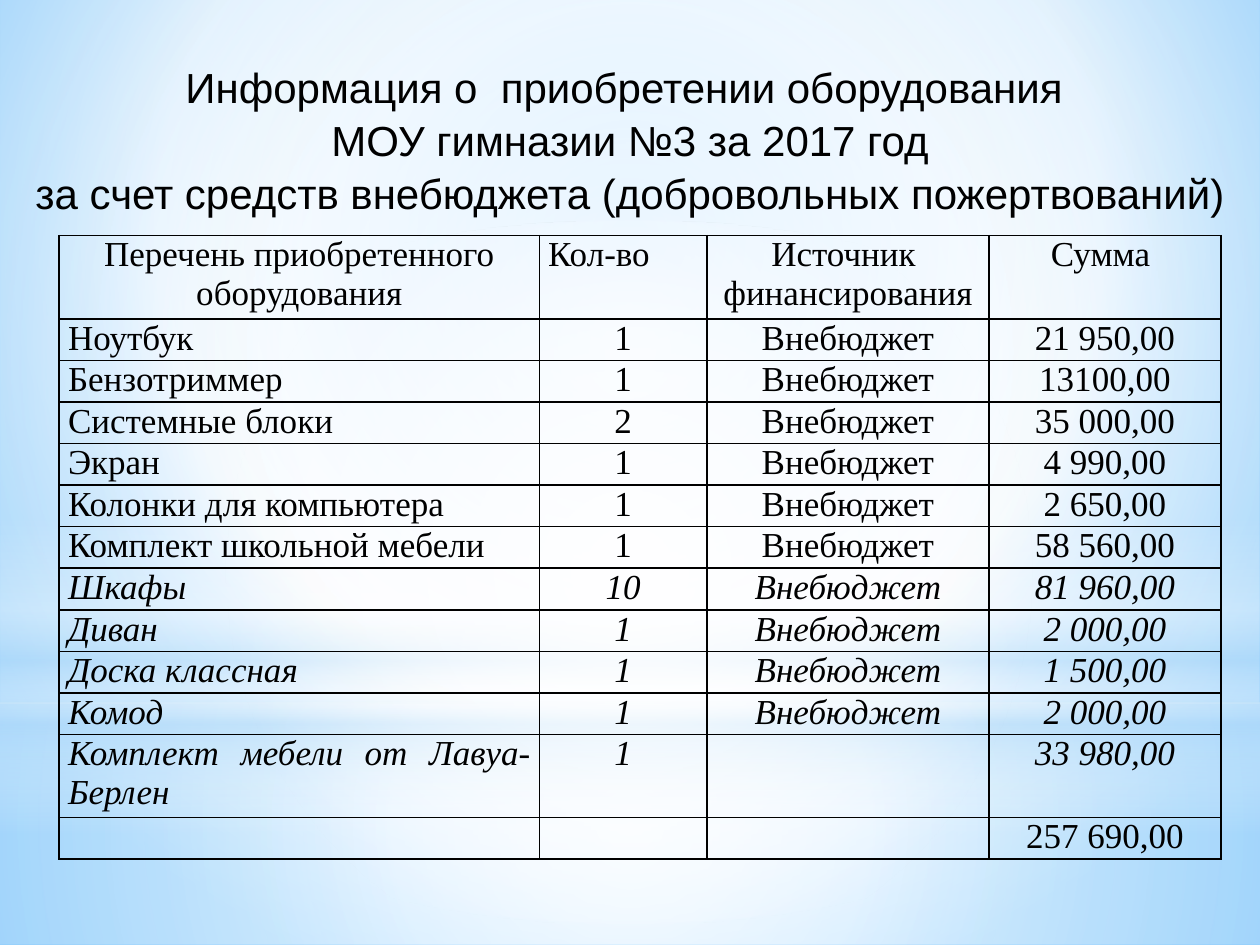
from typing import NamedTuple, Optional

from pptx import Presentation
from pptx.dml.color import RGBColor
from pptx.enum.shapes import MSO_SHAPE
from pptx.enum.text import MSO_ANCHOR, PP_ALIGN
from pptx.oxml import parse_xml
from pptx.oxml.ns import nsdecls
from pptx.util import Inches, Pt

BLACK = RGBColor(0x00, 0x00, 0x00)
WHITE = RGBColor(0xFF, 0xFF, 0xFF)
PALE_BLUE = RGBColor(0xB4, 0xDC, 0xFA)
SKY = RGBColor(0x9E, 0xD5, 0xFF)
DEEP_SKY = RGBColor(0x5B, 0xB9, 0xFF)


class Stop(NamedTuple):
    position: int
    color: RGBColor
    opacity: int = 100


class Gradient(NamedTuple):
    stops: list[Stop]
    # Focus rectangle (left, top, right, bottom) in percent; None runs downwards
    focus: Optional[tuple[int, int, int, int]] = (50, 50, 50, 50)


class Glow(NamedTuple):
    shape: MSO_SHAPE
    top: float
    height: float
    gradient: Gradient


class Item(NamedTuple):
    name: str
    count: str
    source: str
    amount: str
    italic: bool = False


BACKGROUND = Gradient([Stop(0, SKY), Stop(60, WHITE), Stop(100, DEEP_SKY)],
                      (20, 10, 20, 60))
GLOWS = [
    Glow(MSO_SHAPE.RECTANGLE, 5.58, 1.92, Gradient(
        [Stop(0, WHITE, 91), Stop(37, WHITE, 76), Stop(100, PALE_BLUE, 79)])),
    Glow(MSO_SHAPE.RECTANGLE, 0, 5.58, Gradient(
        [Stop(0, WHITE, 89), Stop(48, WHITE, 62), Stop(100, PALE_BLUE, 79)])),
    Glow(MSO_SHAPE.RECTANGLE, 4.12, 2.5, Gradient(
        [Stop(0, WHITE, 0), Stop(29, WHITE, 30), Stop(45, PALE_BLUE, 40),
         Stop(55, WHITE, 26), Stop(65, PALE_BLUE, 60), Stop(100, WHITE, 0)], None)),
    Glow(MSO_SHAPE.OVAL, 1.75, 5.58, Gradient([Stop(0, WHITE), Stop(56, WHITE, 0)])),
]

TITLE_LINES = [
    "Информация о  приобретении оборудования ",
    "МОУ гимназии №3 за 2017 год",
    "за счет средств внебюджета (добровольных пожертвований)",
]
FUND = "Внебюджет"
HEADER = Item("Перечень приобретенного\nоборудования", "Кол-во",
              "Источник \nфинансирования", "Сумма ")
ITEMS = [
    Item("Ноутбук", "1", FUND, "21 950,00"),
    Item("Бензотриммер", "1", FUND, "13100,00"),
    Item("Системные блоки", "2", FUND, "35 000,00"),
    Item("Экран ", "1", FUND, "4 990,00"),
    Item("Колонки для компьютера", "1", FUND, "2 650,00"),
    Item("Комплект школьной мебели", "1", FUND, "58 560,00"),
    Item("Шкафы", "10", FUND, "81 960,00", True),
    Item("Диван", "1", FUND, "2 000,00", True),
    Item("Доска классная", "1", FUND, "1 500,00", True),
    Item("Комод", "1", FUND, "2 000,00", True),
    Item("Комплект мебели от Лавуа-Берлен", "1", "", "33 980,00", True),
    Item("", "", "", "257 690,00"),
]
COLUMN_WIDTHS = [3.81, 1.33, 2.24, 1.84]
ROW_HEIGHT = 0.33
TWO_LINE_ROWS = {0, 11}
HEADER_ALIGN = [PP_ALIGN.CENTER, PP_ALIGN.LEFT, PP_ALIGN.CENTER, PP_ALIGN.CENTER]
ITEM_ALIGN = [PP_ALIGN.JUSTIFY] + [PP_ALIGN.CENTER] * 3


def apply_gradient(fill, owner, gradient: Gradient) -> None:
    """Fill the owner element of a fill with a gradient."""
    fill.solid()
    stops = "".join(
        f'<a:gs pos="{stop.position * 1000}"><a:srgbClr val="{stop.color}">'
        f'<a:alpha val="{stop.opacity * 1000}"/></a:srgbClr></a:gs>'
        for stop in gradient.stops)
    if gradient.focus is None:
        direction = '<a:lin ang="5400000" scaled="0"/>'
    else:
        sides = " ".join(f'{side}="{value * 1000}"'
                         for side, value in zip("ltrb", gradient.focus))
        direction = f'<a:path path="circle"><a:fillToRect {sides}/></a:path>'
    solid = owner.xpath(".//a:solidFill")[0]
    solid.getparent().replace(solid, parse_xml(
        f'<a:gradFill {nsdecls("a")} rotWithShape="1"><a:gsLst>{stops}</a:gsLst>'
        f'{direction}</a:gradFill>'))


def add_glow(s, glow: Glow) -> None:
    sp = s.shapes.add_shape(glow.shape, 0, Inches(glow.top),
                            Inches(10), Inches(glow.height))
    sp.shadow.inherit = False
    sp.line.fill.background()
    apply_gradient(sp.fill, sp.element.spPr, glow.gradient)


def set_borders(cell) -> None:
    tc_pr = cell._tc.get_or_add_tcPr()
    for index, side in enumerate("LRTB"):
        tc_pr.insert(index, parse_xml(
            f'<a:ln{side} {nsdecls("a")} w="12700"><a:solidFill>'
            f'<a:srgbClr val="{BLACK}"/></a:solidFill></a:ln{side}>'))


def format_paragraph(p, font: str, size: int, align: PP_ALIGN,
                     italic: bool = False) -> None:
    p.alignment = align
    p.font.name = font
    p.font.size = Pt(size)
    p.font.italic = italic
    p.font.color.rgb = BLACK


def fill_cell(cell, text: str, align: PP_ALIGN, italic: bool) -> None:
    cell.margin_left = cell.margin_right = Inches(0.07)
    cell.margin_top = cell.margin_bottom = 0
    cell.fill.background()
    set_borders(cell)
    cell.text_frame.text = text
    for p in cell.text_frame.paragraphs:
        format_paragraph(p, "Times New Roman", 20, align, italic)


def add_equipment_table(s) -> None:
    rows = [HEADER] + ITEMS
    heights = [ROW_HEIGHT * (2 if i in TWO_LINE_ROWS else 1) for i in range(len(rows))]
    table = s.shapes.add_table(
        len(rows), len(COLUMN_WIDTHS), Inches(0.47), Inches(1.87),
        Inches(sum(COLUMN_WIDTHS)), Inches(sum(heights))).table
    table.first_row = table.horz_banding = False
    for column, width in zip(table.columns, COLUMN_WIDTHS):
        column.width = Inches(width)
    for i, (item, height) in enumerate(zip(rows, heights)):
        table.rows[i].height = Inches(height)
        aligns = HEADER_ALIGN if item is HEADER else ITEM_ALIGN
        for j, (text, align) in enumerate(zip(item[:4], aligns)):
            fill_cell(table.cell(i, j), text, align, item.italic)


def add_title(s) -> None:
    title = s.shapes.title
    title.left, title.top = 0, Inches(0.39)
    title.width, title.height = Inches(10), Inches(1.78)
    tf = title.text_frame
    tf.word_wrap = True
    tf.vertical_anchor = MSO_ANCHOR.TOP
    tf.margin_top = Inches(0.08)
    tf.text = "\n".join(TITLE_LINES)
    for p in tf.paragraphs:
        format_paragraph(p, "Arial", 24, PP_ALIGN.CENTER)
        p.line_spacing = 1.05
    # Bring the title in front of the glows
    title.element.getparent().append(title.element)


def main() -> None:
    prs = Presentation()
    prs.slide_width, prs.slide_height = Inches(10), Inches(7.5)
    s = prs.slides.add_slide(prs.slide_layouts[5])

    # Backdrop
    apply_gradient(s.background.fill, s.element.cSld, BACKGROUND)
    for glow in GLOWS:
        add_glow(s, glow)

    # Content
    add_equipment_table(s)
    add_title(s)
    prs.save("out.pptx")


if __name__ == "__main__":
    main()
